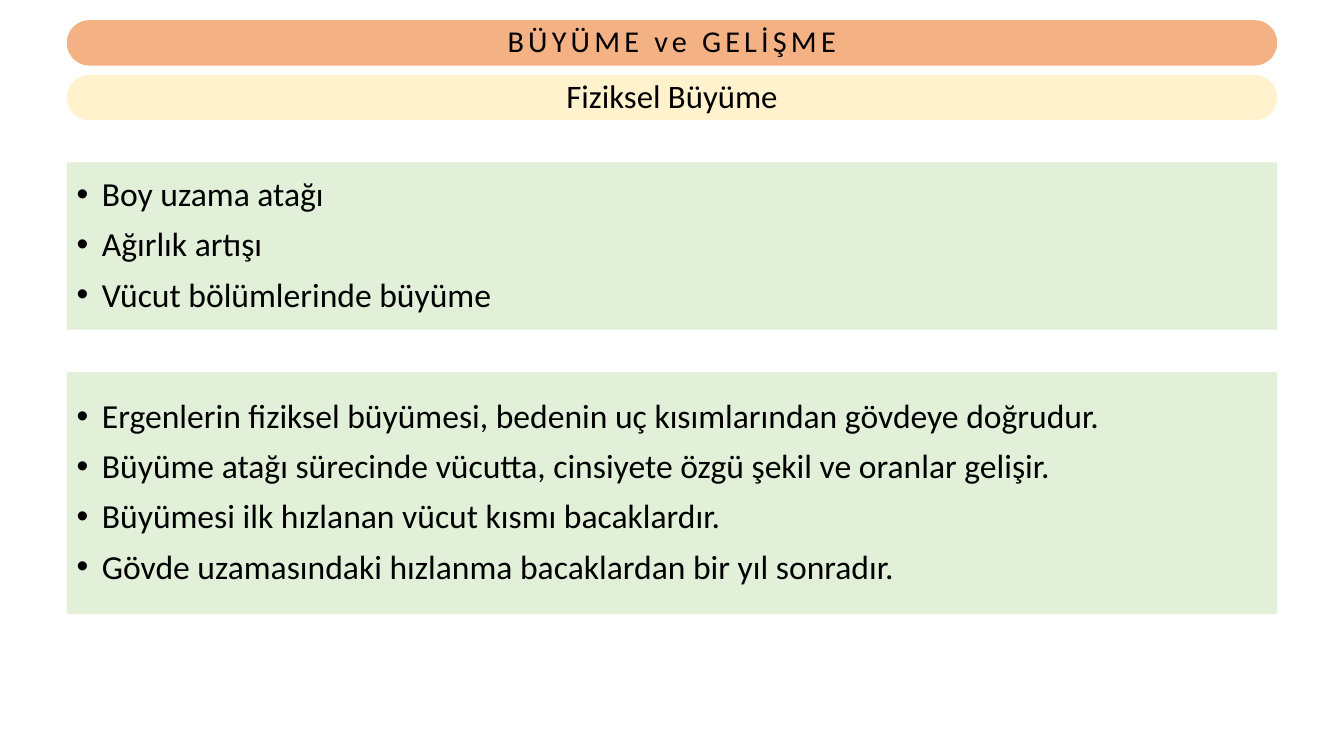
import pptx
import pptx.dml.color
import pptx.enum.shapes
import pptx.enum.text
import pptx.util
import pptx.oxml.ns
from lxml import etree

Pt = pptx.util.Pt
SHAPE = pptx.enum.shapes.MSO_SHAPE
ALIGN = pptx.enum.text.PP_ALIGN


def rgb(value):
    return pptx.dml.color.RGBColor.from_string(value)


def add_bullet(p, indent):
    """Give the paragraph a round bullet with a hanging indent."""
    pPr = p._p.get_or_add_pPr()
    pPr.set("marL", str(Pt(indent)))
    pPr.set("indent", str(-Pt(indent)))
    font = etree.SubElement(pPr, pptx.oxml.ns.qn("a:buFont"))
    font.set("typeface", "Arial")
    char = etree.SubElement(pPr, pptx.oxml.ns.qn("a:buChar"))
    char.set("char", "•")


def write(p, text, *, size, font, color, align, spacing=0, before=0, bullet=False):
    p.alignment = align
    p.line_spacing = 0.9
    p.space_before = Pt(before)
    if bullet:
        add_bullet(p, 18)
    r = p.add_run()
    r.text = text
    r.font.name = font
    r.font.size = Pt(size)
    r.font.color.rgb = rgb(color)
    if spacing:
        r._r.get_or_add_rPr().set("spc", str(spacing * 100))


class Deck:
    LEFT, WIDTH = 47.7, 864.6
    BAR_HEIGHT = 32.4
    FONT, INK = "Calibri", "000000"
    PANEL_FILL = "E2F0D9"

    def __init__(self):
        self.prs = pptx.Presentation()
        self.prs.slide_width, self.prs.slide_height = Pt(960), Pt(540)
        self.slide = self.prs.slides.add_slide(self.prs.slide_layouts[6])

    def block(self, kind, top, height, fill):
        """Add a full-width filled shape ready for text."""
        sp = self.slide.shapes.add_shape(
            kind, Pt(self.LEFT), Pt(top), Pt(self.WIDTH), Pt(height))
        sp.shadow.inherit = False
        sp.fill.solid()
        sp.fill.fore_color.rgb = rgb(fill)
        sp.line.fill.background()
        tf = sp.text_frame
        tf.word_wrap = True
        tf.vertical_anchor = pptx.enum.text.MSO_ANCHOR.MIDDLE
        return sp

    def bar(self, text, top, fill, size, spacing=0):
        sp = self.block(SHAPE.ROUNDED_RECTANGLE, top, self.BAR_HEIGHT, fill)
        sp.adjustments[0] = 0.5
        tf = sp.text_frame
        tf.margin_top = tf.margin_bottom = 0
        write(tf.paragraphs[0], text, size=size, font=self.FONT, color=self.INK,
              align=ALIGN.CENTER, spacing=spacing)

    def panel(self, items, top, height):
        tf = self.block(SHAPE.RECTANGLE, top, height, self.PANEL_FILL).text_frame
        for i, item in enumerate(items):
            p = tf.add_paragraph() if i else tf.paragraphs[0]
            write(p, item, size=24, font=self.FONT, color=self.INK,
                  align=ALIGN.LEFT, before=10 if i else 0, bullet=True)


def main():
    deck = Deck()
    deck.bar("BÜYÜME ve GELİŞME", 14.4, "F4B183", 21.6, spacing=3)
    deck.bar("Fiziksel Büyüme", 53.5, "FFF2CC", 23.4)
    deck.panel([
        "Boy uzama atağı",
        "Ağırlık artışı",
        "Vücut bölümlerinde büyüme",
    ], 116, 119.5)
    deck.panel([
        "Ergenlerin fiziksel büyümesi, bedenin uç kısımlarından gövdeye doğrudur.",
        "Büyüme atağı sürecinde vücutta, cinsiyete özgü şekil ve oranlar gelişir.",
        "Büyümesi ilk hızlanan vücut kısmı bacaklardır.",
        "Gövde uzamasındaki hızlanma bacaklardan bir yıl sonradır.",
    ], 265.7, 172.8)
    deck.prs.save("out.pptx")


if __name__ == "__main__":
    main()
